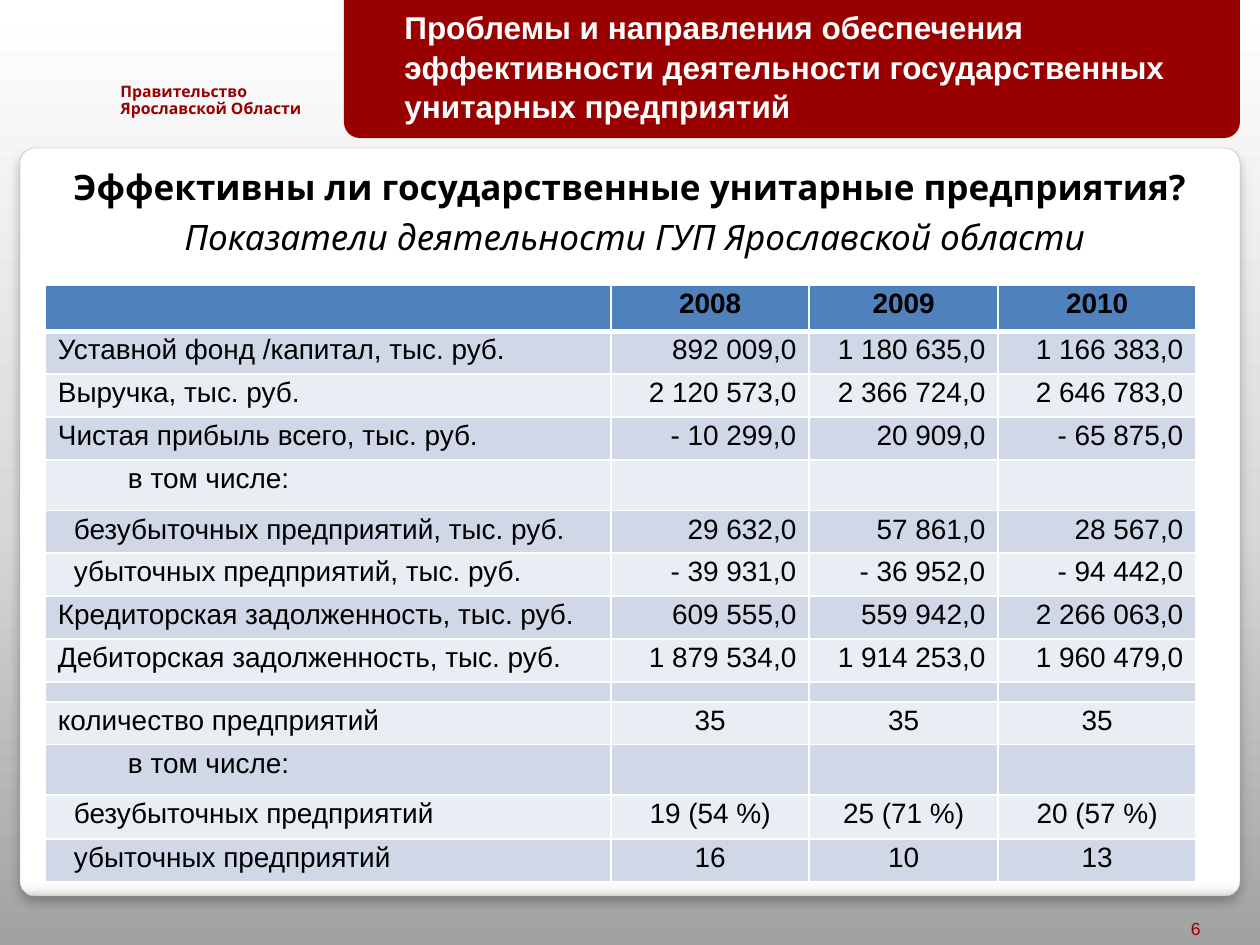
"""Build the slide on the performance of state unitary enterprises."""
from dataclasses import dataclass

from lxml import etree
from pptx import Presentation
from pptx.dml.color import RGBColor
from pptx.enum.shapes import MSO_SHAPE
from pptx.enum.text import MSO_ANCHOR, PP_ALIGN
from pptx.oxml.ns import qn
from pptx.util import Emu, Pt

LEFT, CENTER, RIGHT = PP_ALIGN.LEFT, PP_ALIGN.CENTER, PP_ALIGN.RIGHT
TOP, BOTTOM = MSO_ANCHOR.TOP, MSO_ANCHOR.BOTTOM
ROUNDED = MSO_SHAPE.ROUNDED_RECTANGLE
PX_PER_INCH = 126


@dataclass(frozen=True)
class Theme:
    accent: str = "990000"
    white: str = "FFFFFF"
    ink: str = "000000"
    outline: str = "A4A4A4"
    head: str = "4F81BD"
    bands: tuple = ("D0D8E8", "E9EDF4")
    backdrop: tuple = ((0, "A2A2A2"), (45, "D8D8D8"), (100, "FFFFFF"))
    sheet: tuple = ((0, "FFFFFF"), (98, "FFFFFF"), (99, "F7F7F7"), (100, "DADADA"))
    sans: str = "Arial"
    humanist: str = "Noto Sans"
    org_size: int = 9
    number_size: int = 10
    table_size: int = 16
    banner_size: int = 18
    heading_size: int = 20
    gap_size: int = 3
    blank_size: int = 18


def px(length):
    return Emu(round(length * 914400 / PX_PER_INCH))


def add(parent, tag, **attributes):
    return etree.SubElement(parent, qn(tag), {k: str(v) for k, v in attributes.items()})


def use_gradient(holder, stops, angle):
    gradient = etree.Element(qn("a:gradFill"), rotWithShape="1")
    stop_list = add(gradient, "a:gsLst")
    for position, color in stops:
        stop = add(stop_list, "a:gs", pos=position * 1000)
        add(stop, "a:srgbClr", val=color)
    add(gradient, "a:lin", ang=angle * 60000, scaled=0)
    holder.replace(holder.find(qn("a:solidFill")), gradient)


class SlideBuilder:
    def __init__(self, slide, theme):
        self.slide, self.theme = slide, theme

    def background(self):
        self.slide.background.fill.solid()
        holder = self.slide._element.find(".//" + qn("p:bgPr"))
        use_gradient(holder, self.theme.backdrop, 270)

    def panel(self, box, rounding, color):
        panel = self.slide.shapes.add_shape(ROUNDED, *map(px, box))
        panel.adjustments[0] = rounding
        panel.shadow.inherit = False
        panel.fill.solid()
        panel.fill.fore_color.rgb = RGBColor.from_string(color)
        panel.line.fill.background()
        return panel

    def sheet(self, box, rounding):
        sheet = self.panel(box, rounding, self.theme.white)
        sheet.line.color.rgb = RGBColor.from_string(self.theme.outline)
        sheet.line.width = Pt(0.16)
        properties = sheet._element.spPr
        use_gradient(properties, self.theme.sheet, 90)
        shadow = add(properties.find(qn("a:effectLst")), "a:outerShdw", blurRad=Pt(6),
                     dist=Pt(4), dir=90 * 60000, algn="t", rotWithShape=0)
        add(add(shadow, "a:srgbClr", val=self.theme.ink), "a:alpha", val=25000)

    def style(self, paragraph, font, size, color, align, spacing, bold=False, italic=False):
        paragraph.alignment = align
        paragraph.line_spacing = spacing
        for run in paragraph.runs:
            run.font.name, run.font.size = font, Pt(size)
            run.font.bold, run.font.italic = bold, italic
            run.font.color.rgb = RGBColor.from_string(color)

    def text(self, box, words, font, size, color, align=LEFT, anchor=TOP, spacing=1.0, **emphasis):
        frame = self.slide.shapes.add_textbox(*map(px, box)).text_frame
        frame.word_wrap = True
        frame.vertical_anchor = anchor
        frame.text = words
        for paragraph in frame.paragraphs:
            self.style(paragraph, font, size, color, align, spacing, **emphasis)

    def borders(self, cell, bottom):
        properties = cell._tc.get_or_add_tcPr()
        for place, (side, width) in enumerate((("L", 1), ("R", 1), ("T", 1), ("B", bottom))):
            line = etree.Element(qn("a:ln" + side), w=str(Pt(width)))
            add(add(line, "a:solidFill"), "a:srgbClr", val=self.theme.white)
            properties.insert(place, line)

    def cell(self, cell, words, fill, align, bold, indent, blank_size, bottom):
        cell.fill.solid()
        cell.fill.fore_color.rgb = RGBColor.from_string(fill)
        self.borders(cell, bottom)
        cell.margin_left = px(13 + indent)
        cell.text = words
        paragraph = cell.text_frame.paragraphs[0]
        self.style(paragraph, self.theme.sans, self.theme.table_size, self.theme.ink,
                   align, 0.9, bold=bold)
        if not words:
            add(paragraph._p, "a:endParaRPr", sz=blank_size * 100)

    def table(self, origin, widths, header, rows):
        theme = self.theme
        lines = [(42, 0, CENTER, header), *rows]
        heights = [line[0] for line in lines]
        table = self.slide.shapes.add_table(
            len(lines), len(widths), *map(px, (*origin, sum(widths), sum(heights)))).table
        for column, width in zip(table.columns, widths):
            column.width = px(width)
        for r, (height, indent, align, values) in enumerate(lines):
            table.rows[r].height = px(height)
            is_header = r == 0
            fill = theme.head if is_header else theme.bands[(r - 1) % 2]
            blank_size = theme.blank_size if any(values) else theme.gap_size
            if is_header:
                blank_size = theme.table_size
            for c, words in enumerate(values):
                self.cell(table.cell(r, c), words, fill, align if c else LEFT, is_header,
                          0 if c else indent, blank_size, 3 if is_header else 1)


HEADER = ("", "2008", "2009", "2010")
INDICATORS = (
    (41, 0, RIGHT, ("Уставной фонд /капитал, тыс. руб.", "892 009,0", "1 180 635,0", "1 166 383,0")),
    (43, 0, RIGHT, ("Выручка, тыс. руб.", "2 120 573,0", "2 366 724,0", "2 646 783,0")),
    (41, 0, RIGHT, ("Чистая прибыль всего, тыс. руб.", "- 10 299,0", "20 909,0", "- 65 875,0")),
    (44, 70, RIGHT, ("в том числе:", "", "", "")),
    (41, 16, RIGHT, ("безубыточных предприятий, тыс. руб.", "29 632,0", "57 861,0", "28 567,0")),
    (41, 16, RIGHT, ("убыточных предприятий, тыс. руб.", "- 39 931,0", "- 36 952,0", "- 94 442,0")),
    (40, 0, RIGHT, ("Кредиторская задолженность, тыс. руб.", "609 555,0", "559 942,0", "2 266 063,0")),
    (41, 0, RIGHT, ("Дебиторская задолженность, тыс. руб.", "1 879 534,0", "1 914 253,0", "1 960 479,0")),
    (20, 0, CENTER, ("", "", "", "")),
    (41, 0, CENTER, ("количество предприятий", "35", "35", "35")),
    (43, 70, CENTER, ("в том числе:", "", "", "")),
    (44, 16, CENTER, ("безубыточных предприятий", "19 (54 %)", "25 (71 %)", "20 (57 %)")),
    (41, 16, CENTER, ("убыточных предприятий", "16", "10", "13")),
)


def main():
    deck = Presentation()
    deck.slide_width, deck.slide_height = px(1260), px(945)
    theme = Theme()
    page = SlideBuilder(deck.slides.add_slide(deck.slide_layouts[6]), theme)
    page.background()
    page.sheet((20, 148, 1220, 748), 0.02)
    page.text((108, 78, 237, 50), "Правительство\nЯрославской Области",
              theme.humanist, theme.org_size, theme.accent, spacing=0.9, bold=True)
    page.panel((344, -20, 896, 158), 0.1, theme.accent)
    page.text((1150, 895, 63, 50), "6", theme.sans, theme.number_size, theme.accent, RIGHT, BOTTOM)
    page.text((392, 0, 824, 127),
              "Проблемы и направления обеспечения эффективности деятельности "
              "государственных унитарных предприятий",
              theme.sans, theme.banner_size, theme.white, spacing=1.05, bold=True)
    page.text((35, 155, 1190, 59), "Эффективны ли государственные унитарные предприятия?",
              theme.humanist, theme.heading_size, theme.ink, CENTER, BOTTOM, bold=True)
    page.text((134, 195, 1002, 69), "Показатели деятельности ГУП Ярославской области",
              theme.humanist, theme.heading_size, theme.ink, CENTER, BOTTOM, italic=True)
    page.table((45, 285), (566, 198, 189, 198), HEADER, INDICATORS)
    deck.save("out.pptx")


if __name__ == "__main__":
    main()
